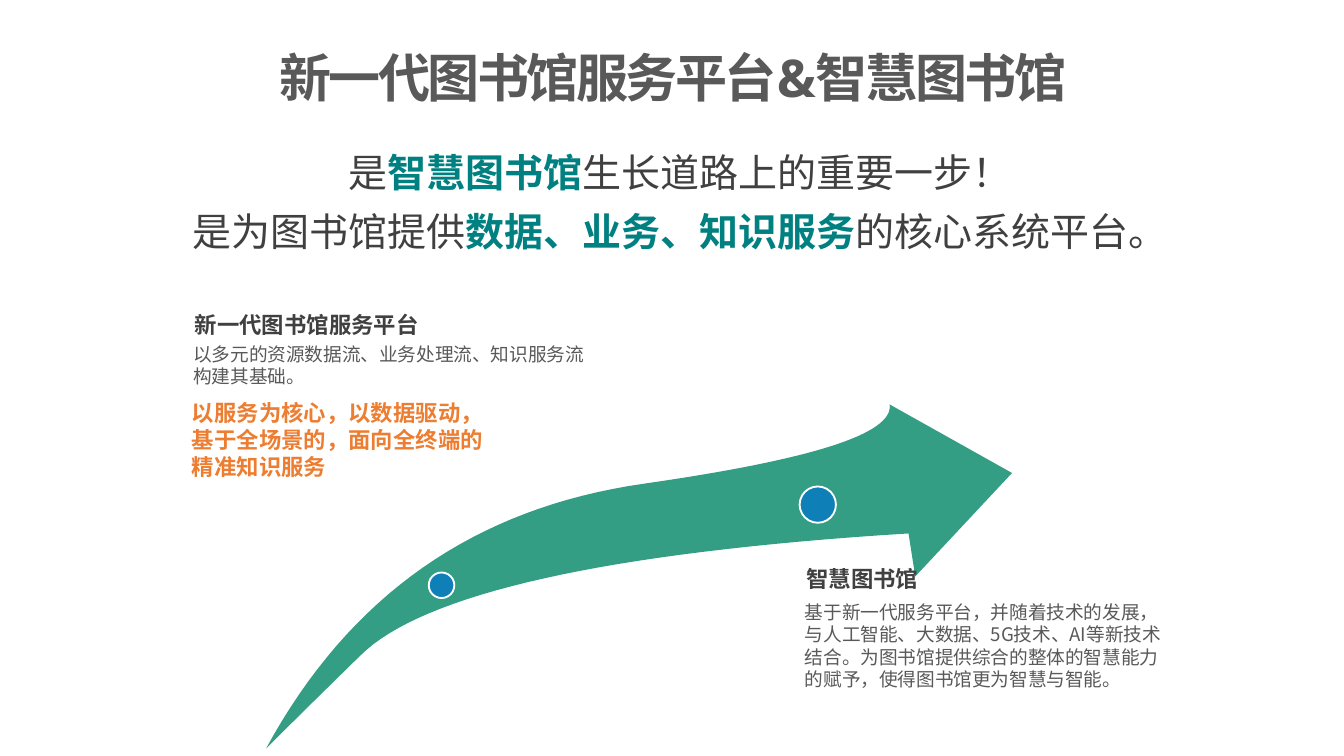
from dataclasses import dataclass

import pptx
import pptx.dml.color
import pptx.enum.shapes
import pptx.enum.text
import pptx.oxml.ns
import pptx.util
from lxml import etree

Inches = pptx.util.Inches
Pt = pptx.util.Pt
Align = pptx.enum.text.PP_ALIGN
Anchor = pptx.enum.text.MSO_ANCHOR
Fit = pptx.enum.text.MSO_AUTO_SIZE


@dataclass(frozen=True)
class Theme:
    latin: str = "Open Sans"
    asian: str = "Noto Sans CJK SC"
    dark: str = "404040"
    gray: str = "595959"
    teal: str = "008080"
    orange: str = "ED7D31"
    green: str = "349E85"
    blue: str = "0E7FB7"
    white: str = "FFFFFF"
    title: float = 27.9
    lead: float = 20.9
    head: float = 12
    body: float = 10


THEME = Theme()


@dataclass(frozen=True)
class Span:
    text: str
    size: float
    color: str
    bold: bool = False
    font: str = THEME.asian
    track: int = 0


@dataclass(frozen=True)
class Block:
    place: tuple[float, float, float, float]
    lines: list[list[Span]]
    inset: tuple[float, float, float, float] = (0.1, 0.05, 0.1, 0.05)
    align: Align = Align.LEFT
    anchor: Anchor = Anchor.TOP
    pitch: float | pptx.util.Length = 1.0
    fit: Fit = Fit.SHAPE_TO_FIT_TEXT


@dataclass(frozen=True)
class Dot:
    left: float
    top: float
    size: float


def paint(color: str) -> pptx.dml.color.RGBColor:
    return pptx.dml.color.RGBColor.from_string(color)


def apply(target: object, values: dict[str, object]) -> None:
    for name, value in values.items():
        setattr(target, name, value)


def add_span(para, span: Span) -> None:
    run = para.add_run()
    run.text = span.text
    apply(run.font, {"name": span.font, "size": Pt(span.size), "bold": span.bold})
    run.font.color.rgb = paint(span.color)
    props = run._r.get_or_add_rPr()
    if span.track:
        props.set("spc", str(span.track))
    asian = etree.Element(pptx.oxml.ns.qn("a:ea"), typeface=THEME.asian)
    props.find(pptx.oxml.ns.qn("a:latin")).addnext(asian)


def fill_block(shape, block: Block) -> None:
    sides = ("left", "top", "width", "height")
    apply(shape, {side: Inches(size) for side, size in zip(sides, block.place)})
    frame = shape.text_frame
    edges = ("margin_left", "margin_top", "margin_right", "margin_bottom")
    apply(frame, {edge: Inches(size) for edge, size in zip(edges, block.inset)})
    apply(frame, {"word_wrap": True, "auto_size": block.fit,
                  "vertical_anchor": block.anchor})
    for index, line in enumerate(block.lines):
        para = frame.add_paragraph() if index else frame.paragraphs[0]
        apply(para, {"alignment": block.align, "line_spacing": block.pitch})
        for span in line:
            add_span(para, span)


def curve(start, first, second, end, steps: int = 32) -> list[tuple[float, float]]:
    points = []
    for step in range(1, steps + 1):
        t = step / steps
        u = 1 - t
        weights = (u**3, 3 * u * u * t, 3 * u * t * t, t**3)
        points.append(tuple(
            sum(w * p[axis] for w, p in zip(weights, (start, first, second, end)))
            for axis in (0, 1)))
    return points


def add_arrow(shapes) -> None:
    tail, bend, tip = (1.98, 5.57), (4.79, 3.6), (6.62, 3.01)
    neck, fold = (6.76, 3.97), (2.68, 4.88)
    points = [
        *curve(tail, (2.6, 4.43), (3.53, 3.78), bend),
        *curve(bend, (6.04, 3.42), (6.65, 3.23), tip),
        (7.53, 3.52), (6.81, 4.29), neck,
        *curve(neck, (4.5, 4.11), (3.14, 4.42), fold),
        *curve(fold, (2.21, 5.34), tail, tail),
    ]
    pen = shapes.build_freeform(Inches(tail[0]), Inches(tail[1]))
    pen.add_line_segments([(Inches(x), Inches(y)) for x, y in points], close=True)
    arrow = pen.convert_to_shape()
    arrow.shadow.inherit = False
    arrow.fill.solid()
    arrow.fill.fore_color.rgb = paint(THEME.green)
    arrow.line.fill.background()


def add_dot(shapes, dot: Dot) -> None:
    size = Inches(dot.size)
    oval = shapes.add_shape(pptx.enum.shapes.MSO_SHAPE.OVAL,
                            Inches(dot.left), Inches(dot.top), size, size)
    oval.shadow.inherit = False
    oval.fill.solid()
    oval.fill.fore_color.rgb = paint(THEME.blue)
    oval.line.color.rgb = paint(THEME.white)
    oval.line.width = Pt(1)


def plain(text: str) -> Span:
    return Span(text, THEME.lead, THEME.dark)


def strong(text: str) -> Span:
    return Span(text, THEME.lead, THEME.teal, True)


def label(place: tuple[float, float, float, float], text: str, indent: float) -> Block:
    return Block(place, [[Span(text, THEME.head, THEME.dark, True)]],
                 inset=(indent, 0, 0, 0), pitch=0.9, fit=Fit.NONE)


def note(place: tuple[float, float, float, float], text: str) -> Block:
    return Block(place, [[Span(text, THEME.body, THEME.gray)]])


SLIM = (0.04, 0.02, 0.04, 0.02)
TITLE = Block((0.64, 0.32, 8.73, 0.51),
              [[Span("新一代图书馆服务平台&智慧图书馆", THEME.title, THEME.gray,
                     True, THEME.latin, -130)]],
              inset=SLIM, align=Align.CENTER)
BLOCKS = [
    Block((1.23, 1, 7.66, 0.91),
          [[plain("是"), strong("智慧图书馆"), plain("生长道路上的重要一步！")],
           [plain("是为图书馆提供"), strong("数据、业务、知识服务"),
            plain("的核心系统平台。")]],
          inset=SLIM, align=Align.CENTER, anchor=Anchor.MIDDLE, pitch=Pt(31.4)),
    label((1.37, 2.34, 2.76, 0.24), "新一代图书馆服务平台", 0.08),
    label((5.8, 4.23, 2.4, 0.23), "智慧图书馆", 0.2),
    note((5.89, 4.42, 2.89, 0.94),
         "基于新一代服务平台，并随着技术的发展，与人工智能、大数据、5G技术、AI等新技术结合。"
         "为图书馆提供综合的整体的智慧能力的赋予，使得图书馆更为智慧与智能。"),
    note((1.34, 2.5, 3.19, 0.44),
         "以多元的资源数据流、业务处理流、知识服务流构建其基础。"),
    Block((1.33, 2.92, 3.51, 0.71),
          [[Span(text, THEME.head, THEME.orange, True)] for text in (
              "以服务为核心，以数据驱动，",
              "基于全场景的，面向全终端的",
              "精准知识服务")]),
]
DOTS = [Dot(3.19, 4.26, 0.19), Dot(5.95, 3.62, 0.27)]


def main() -> None:
    deck = pptx.Presentation()
    wide = Inches(10)
    apply(deck, {"slide_width": wide, "slide_height": wide * 9 // 16})
    slide = deck.slides.add_slide(deck.slide_layouts[5])
    shapes = slide.shapes
    fill_block(shapes.title, TITLE)
    add_arrow(shapes)
    for dot in DOTS:
        add_dot(shapes, dot)
    for block in BLOCKS:
        fill_block(shapes.add_textbox(0, 0, 0, 0), block)
    deck.save("out.pptx")


if __name__ == "__main__":
    main()
